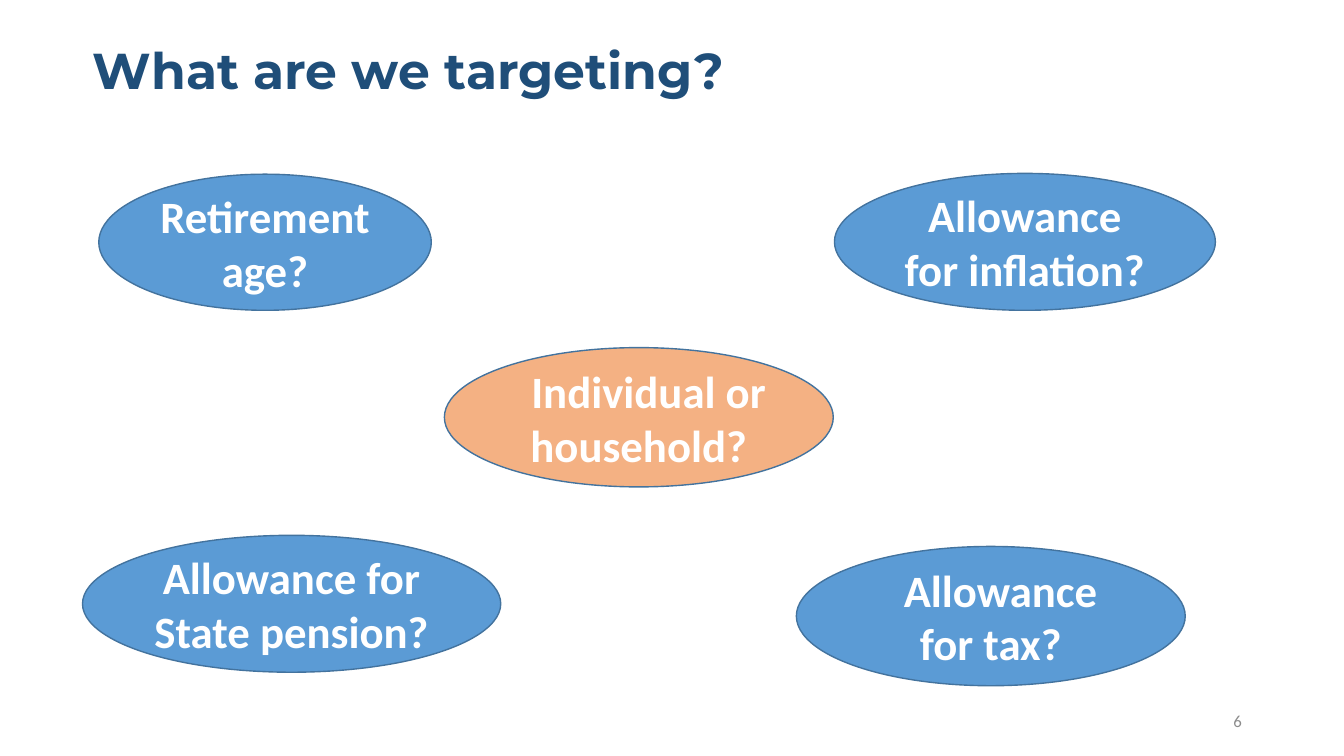
from dataclasses import dataclass

import pptx
import pptx.dml.color
import pptx.enum.shapes
import pptx.enum.text
import pptx.util

Cm = pptx.util.Cm
Pt = pptx.util.Pt
Align = pptx.enum.text.PP_ALIGN
Anchor = pptx.enum.text.MSO_ANCHOR

BLUE = "5B9BD5"
ORANGE = "F4B183"
OUTLINE = "43739E"


@dataclass
class Question:
    text: str
    left: float
    top: float
    width: float
    height: float
    fill: str = BLUE
    first_line_indent: float = 0


QUESTIONS = [
    Question("Retirement age?", 2.49, 4.39, 8.38, 3.43),
    Question("Individual or household?", 11.2, 8.76, 9.8, 3.51, ORANGE, 0.5),
    Question("Allowance for inflation?", 21.03, 4.37, 9.6, 3.45),
    Question("Allowance for tax?", 20.07, 13.77, 9.8, 3.51, first_line_indent=0.5),
    Question("Allowance for State pension?", 2.08, 13.49, 10.54, 3.45),
]


def color(value: str) -> pptx.dml.color.RGBColor:
    return pptx.dml.color.RGBColor.from_string(value)


def write_text(shape, text: str, *, size: float, fill: str, font: str = "Calibri",
               bold: bool = False, align=Align.LEFT, anchor=Anchor.MIDDLE,
               line_spacing: float = 1.0, first_line_indent: float = 0) -> None:
    frame = shape.text_frame
    frame.word_wrap = True
    frame.auto_size = pptx.enum.text.MSO_AUTO_SIZE.NONE
    frame.vertical_anchor = anchor
    paragraph = frame.paragraphs[0]
    paragraph.alignment = align
    paragraph.line_spacing = line_spacing
    if first_line_indent:
        properties = paragraph._p.get_or_add_pPr()
        properties.set("marL", "0")
        properties.set("indent", str(Cm(first_line_indent)))
    run = paragraph.add_run()
    run.text = text
    run.font.name = font
    run.font.size = Pt(size)
    run.font.bold = bold
    run.font.color.rgb = color(fill)


def add_title(slide, text: str) -> None:
    title = slide.shapes.title
    title.left, title.top = Cm(2.08), Cm(1.02)
    title.width, title.height = Cm(29.46), Cm(3.05)
    write_text(title, text, size=36, fill="1F4E79", font="Montserrat", bold=True,
               anchor=Anchor.TOP, line_spacing=0.9)


def add_slide_number(slide, text: str) -> None:
    box = slide.shapes.add_textbox(Cm(23.93), Cm(17.65), Cm(7.62), Cm(1.02))
    write_text(box, text, size=12, fill="8C8C8C", align=Align.RIGHT)


def add_question(slide, question: Question) -> None:
    ellipse = slide.shapes.add_shape(
        pptx.enum.shapes.MSO_SHAPE.OVAL, Cm(question.left), Cm(question.top),
        Cm(question.width), Cm(question.height))
    ellipse.shadow.inherit = False
    ellipse.fill.solid()
    ellipse.fill.fore_color.rgb = color(question.fill)
    ellipse.line.color.rgb = color(OUTLINE)
    ellipse.line.width = Pt(1)
    write_text(ellipse, question.text, size=32, fill="FFFFFF", bold=True,
               align=Align.CENTER, first_line_indent=question.first_line_indent)


def main() -> None:
    presentation = pptx.Presentation()
    presentation.slide_width = Cm(33.87)
    presentation.slide_height = Cm(19.05)
    slide = presentation.slides.add_slide(presentation.slide_layouts[5])
    add_title(slide, "What are we targeting?")
    add_slide_number(slide, "6")
    for question in QUESTIONS:
        add_question(slide, question)
    presentation.save("out.pptx")


if __name__ == "__main__":
    main()
